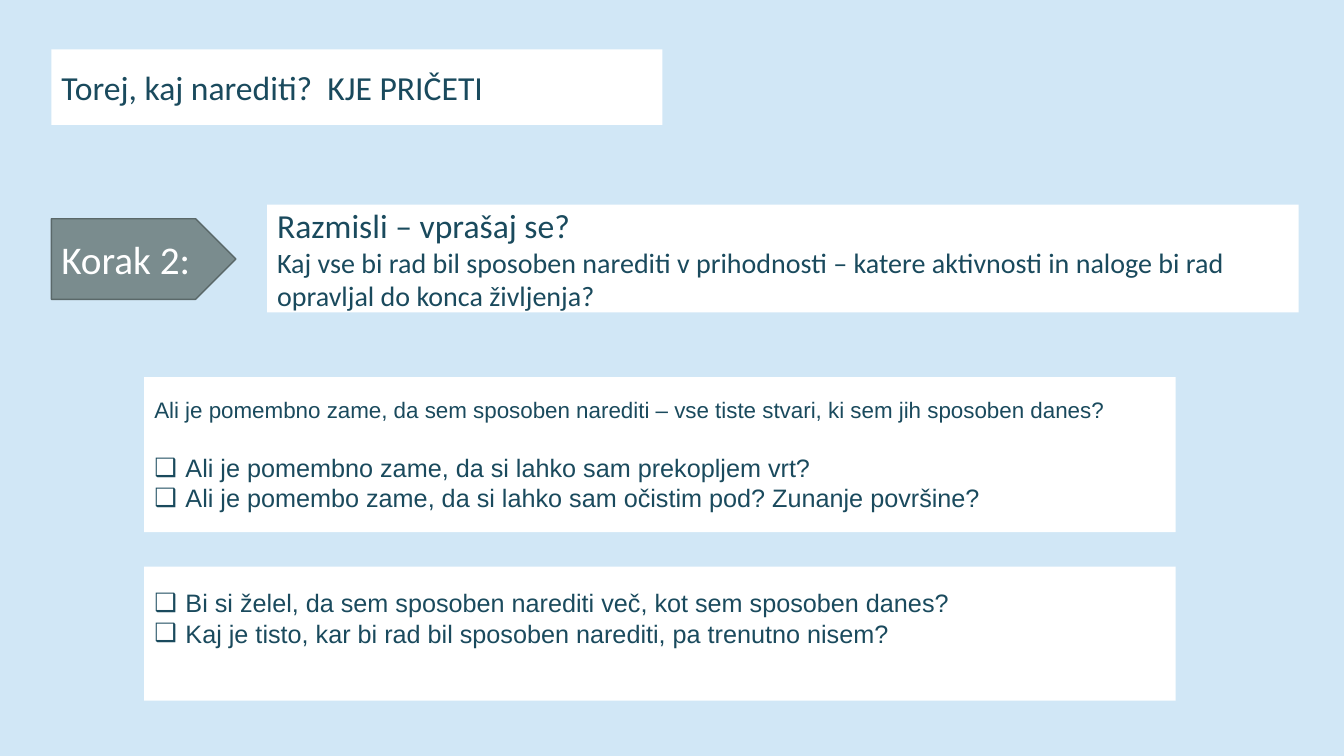
from pptx import Presentation
from pptx.dml.color import RGBColor
from pptx.enum import shapes, text
from pptx.oxml import ns, xmlchemy
from pptx.util import Inches, Pt

COLOURS = {
    "background": "D1E7F6",
    "panel": "FFFFFF",
    "ink": "1A4A5D",
    "step": "7A8C8E",
    "step_line": "5A6869",
    "step_text": "FFFFFF",
}
TWO_CONTENT_LAYOUT = 3
INDENT = Inches(0.31)


def colour(name):
    return RGBColor.from_string(COLOURS[name])


def format_panel(shape, left, top, width, height, fill="panel", line=None):
    """Place a shape or placeholder and give it a flat fill and text frame."""
    shape.left, shape.top = Inches(left), Inches(top)
    shape.width, shape.height = Inches(width), Inches(height)
    shape.shadow.inherit = False
    shape.fill.solid()
    shape.fill.fore_color.rgb = colour(fill)
    if line:
        shape.line.color.rgb = colour(line)
        shape.line.width = Pt(1)
    else:
        shape.line.fill.background()
    frame = shape.text_frame
    frame.word_wrap = True
    frame.auto_size = text.MSO_AUTO_SIZE.NONE
    frame.vertical_anchor = text.MSO_ANCHOR.MIDDLE
    frame.margin_left = frame.margin_right = Inches(0.1)
    frame.margin_top = frame.margin_bottom = Inches(0.05)


def set_bullet(paragraph, bullet):
    properties = paragraph._p.get_or_add_pPr()
    properties.set("marL", str(INDENT if bullet else 0))
    properties.set("indent", str(-INDENT if bullet else 0))
    mark = xmlchemy.OxmlElement("a:buChar" if bullet else "a:buNone")
    if bullet:
        mark.set("char", "❑")
    properties.append(mark)


def write_paragraphs(shape, lines, font, ink="ink"):
    """Write (wording, size, bullet, space before) lines into a shape."""
    frame = shape.text_frame
    for index, (wording, size, bullet, space) in enumerate(lines):
        paragraph = frame.add_paragraph() if index else frame.paragraphs[0]
        paragraph.alignment = text.PP_ALIGN.LEFT
        paragraph.line_spacing = 1.0
        paragraph.space_before, paragraph.space_after = Pt(space), Pt(0)
        set_bullet(paragraph, bullet)
        run = paragraph.add_run()
        run.text = wording
        run.font.name = font
        run.font.size = Pt(size)
        run.font.color.rgb = colour(ink)


def add_panel(slide, preset, box, lines, fill="panel", line=None, ink="ink"):
    shape = slide.shapes.add_shape(preset, 0, 0, 0, 0)
    format_panel(shape, *box, fill, line)
    write_paragraphs(shape, lines, "Calibri", ink)


def fill_placeholder(placeholder, box, lines, font):
    format_panel(placeholder, *box)
    write_paragraphs(placeholder, lines, font)


def main():
    presentation = Presentation()
    presentation.slide_width = Inches(13.33)
    presentation.slide_height = Inches(7.5)
    slide = presentation.slides.add_slide(
        presentation.slide_layouts[TWO_CONTENT_LAYOUT])
    slide.background.fill.solid()
    slide.background.fill.fore_color.rgb = colour("background")

    title, today, future = slide.placeholders
    fill_placeholder(title, (0.51, 0.49, 6.06, 0.75), [
        ("Torej, kaj narediti?  KJE PRIČETI", 24, False, 0),
    ], "Calibri")

    add_panel(slide, shapes.MSO_SHAPE.PENTAGON, (0.51, 2.17, 1.83, 0.8), [
        ("Korak 2:", 28, False, 0),
    ], "step", "step_line", "step_text")
    add_panel(slide, shapes.MSO_SHAPE.RECTANGLE, (2.65, 2.03, 10.23, 1.07), [
        ("Razmisli – vprašaj se?", 24, False, 0),
        ("Kaj vse bi rad bil sposoben narediti v prihodnosti – katere "
         "aktivnosti in naloge bi rad opravljal do konca življenja?",
         20, False, 0),
    ])

    fill_placeholder(today, (1.43, 3.74, 10.23, 1.54), [
        ("Ali je pomembno zame, da sem sposoben narediti – vse tiste stvari, "
         "ki sem jih sposoben danes?", 16, False, 0),
        ("Ali je pomembno zame, da si lahko sam prekopljem vrt?",
         18, True, 21),
        ("Ali je pomembo zame, da si lahko sam očistim pod? "
         "Zunanje površine?", 18, True, 0),
    ], "Arial")
    fill_placeholder(future, (1.43, 5.62, 10.23, 1.33), [
        ("Bi si želel, da sem sposoben narediti več, kot sem sposoben danes?",
         18, True, 0),
        ("Kaj je tisto, kar bi rad bil sposoben narediti, pa trenutno nisem?",
         18, True, 0),
    ], "Arial")
    future.text_frame.margin_bottom = Inches(0.36)

    presentation.save("out.pptx")


if __name__ == "__main__":
    main()
